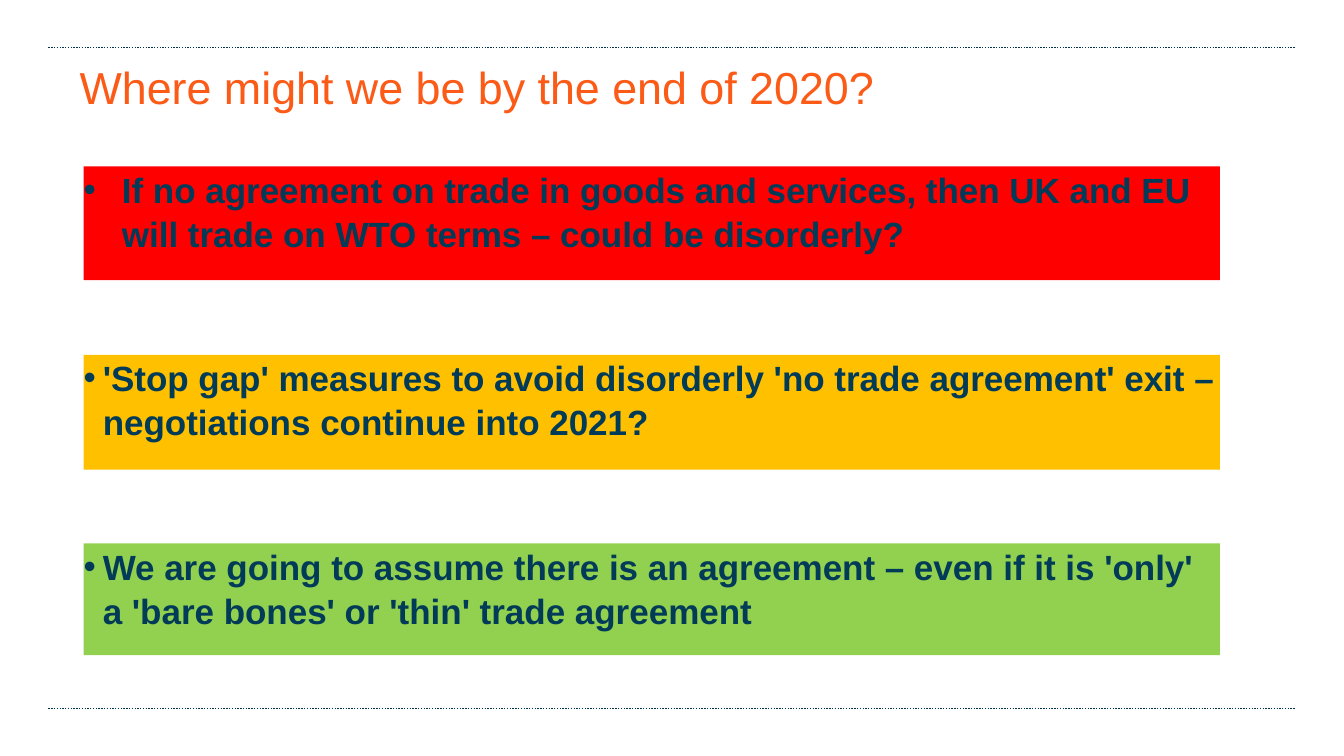
"""Build a slide of three possible trade outcomes by the end of 2020."""
from dataclasses import dataclass

from lxml import etree
from pptx import Presentation
from pptx.dml.color import RGBColor
from pptx.enum import dml, shapes, text
from pptx.oxml import ns
from pptx.util import Inches, Pt


@dataclass(frozen=True)
class Theme:
    """Colours, font and type sizes of the slide."""
    font: str = "Arial"
    title_size: int = 32
    body_size: int = 25
    title: str = "FB5A17"
    body: str = "023B58"
    rule: str = "003145"
    red: str = "FF0000"
    amber: str = "FFC000"
    green: str = "92D050"


THEME = Theme()

OUTCOMES = [
    (1.65, 1.13, 0.38, THEME.red,
     "If no agreement on trade in goods and services, then UK and EU "
     "will trade on WTO terms – could be disorderly?"),
    (3.52, 1.14, 0.19, THEME.amber,
     "'Stop gap' measures to avoid disorderly 'no trade agreement' exit – "
     "negotiations continue into 2021?"),
    (5.39, 1.11, 0.19, THEME.green,
     "We are going to assume there is an agreement – even if it is 'only' "
     "a 'bare bones' or 'thin' trade agreement"),
]


def add_rule(slide, y):
    """Draw a dotted rule across the slide."""
    rule = slide.shapes.add_connector(
        shapes.MSO_CONNECTOR.STRAIGHT,
        Inches(0.48), Inches(y), Inches(12.85), Inches(y))
    rule.line.color.rgb = RGBColor.from_string(THEME.rule)
    rule.line.width = Pt(1)
    rule.line.dash_style = dml.MSO_LINE.ROUND_DOT
    etree.SubElement(rule._element.spPr, ns.qn("a:effectLst"))


def write(frame, words, size, color, bold=False):
    """Fill a frame without margins and return its paragraph."""
    frame.word_wrap = True
    frame.vertical_anchor = text.MSO_ANCHOR.TOP
    frame.margin_left = frame.margin_right = Inches(0)
    frame.margin_top = frame.margin_bottom = Inches(0)
    paragraph = frame.paragraphs[0]
    paragraph.alignment = text.PP_ALIGN.LEFT
    paragraph.line_spacing = 1.05
    run = paragraph.add_run()
    run.text = words
    run.font.name = THEME.font
    run.font.size = Pt(size)
    run.font.bold = bold
    run.font.color.rgb = RGBColor.from_string(color)
    return paragraph


def add_bullet(paragraph, indent):
    """Give a paragraph a coloured bullet and a hanging indent."""
    properties = paragraph._p.get_or_add_pPr()
    properties.set("marL", str(Inches(indent)))
    properties.set("indent", str(-Inches(indent)))
    bullet_color = etree.SubElement(properties, ns.qn("a:buClr"))
    etree.SubElement(bullet_color, ns.qn("a:srgbClr"), val=THEME.body)
    etree.SubElement(properties, ns.qn("a:buFont"), typeface=THEME.font)
    etree.SubElement(properties, ns.qn("a:buChar"), char="•")


def add_title(slide, words):
    """Add the slide heading."""
    heading = slide.shapes.add_textbox(
        Inches(0.79), Inches(0.57), Inches(12.03), Inches(0.95))
    write(heading.text_frame, words, THEME.title_size, THEME.title)


def add_outcome(slide, top, height, indent, color, words):
    """Add a coloured band with one bulleted outcome."""
    band = slide.shapes.add_shape(
        shapes.MSO_SHAPE.RECTANGLE,
        Inches(0.83), Inches(top), Inches(11.27), Inches(height))
    band.shadow.inherit = False
    band.fill.solid()
    band.fill.fore_color.rgb = RGBColor.from_string(color)
    band.line.fill.background()
    outcome = write(band.text_frame, words, THEME.body_size, THEME.body, bold=True)
    outcome.space_before = outcome.space_after = Pt(8)
    add_bullet(outcome, indent)


def main():
    """Build and save the slide."""
    deck = Presentation()
    deck.slide_width, deck.slide_height = Inches(13.33), Inches(7.5)
    slide = deck.slides.add_slide(deck.slide_layouts[6])
    for y in (0.47, 7.03):
        add_rule(slide, y)
    add_title(slide, "Where might we be by the end of 2020?")
    for outcome in OUTCOMES:
        add_outcome(slide, *outcome)
    deck.save("out.pptx")


if __name__ == "__main__":
    main()
